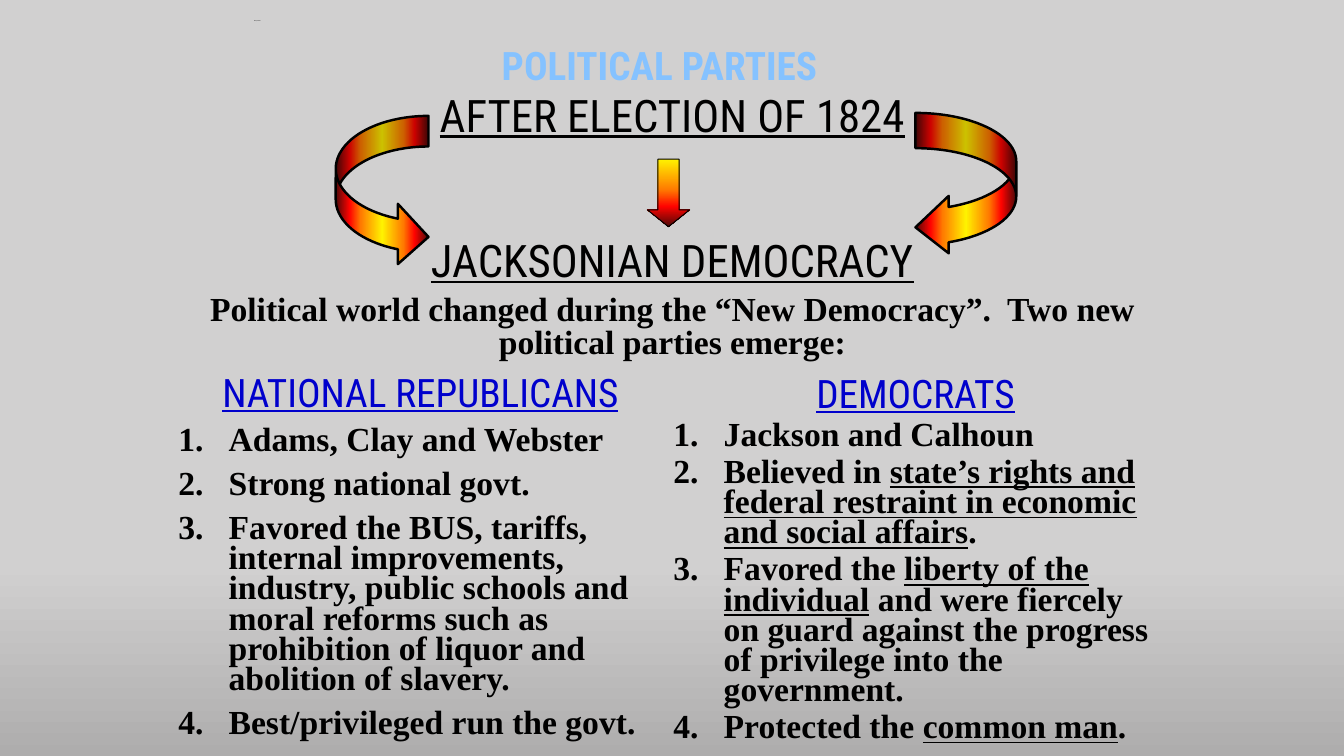
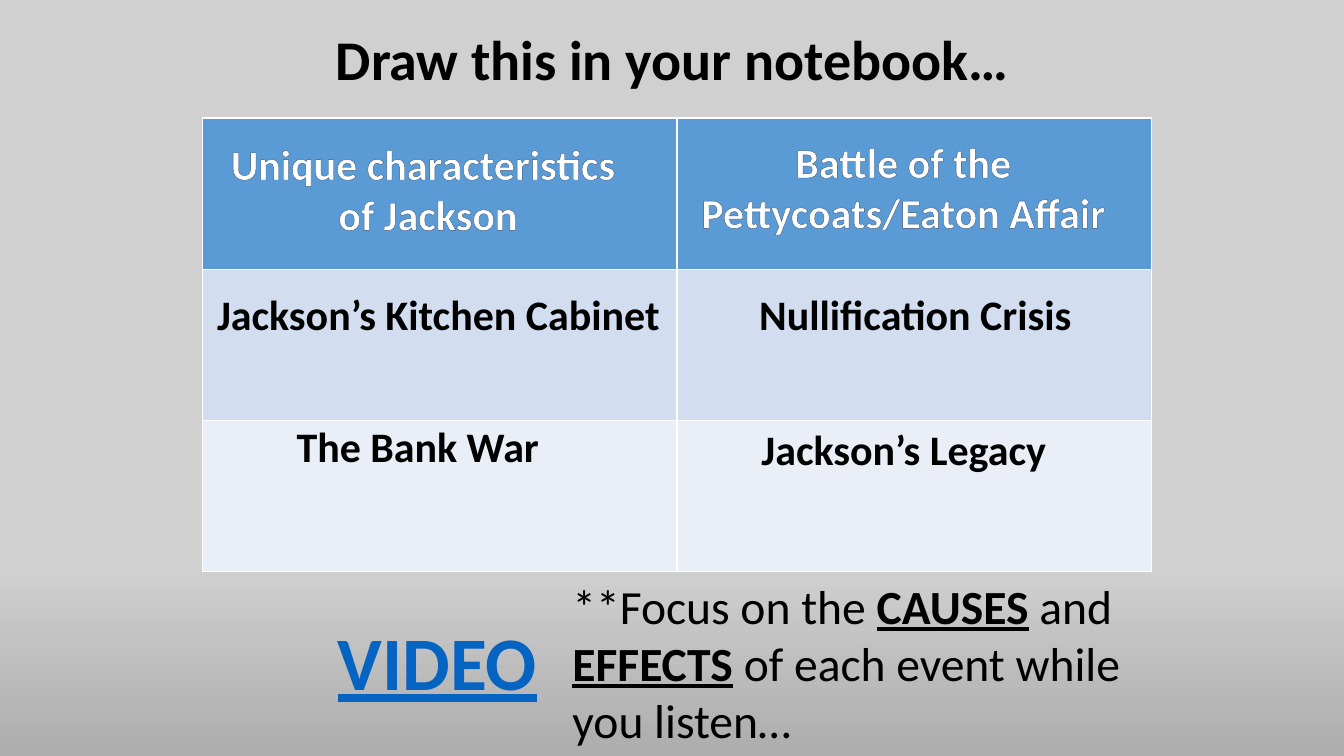
"""Build two slides on Jacksonian democracy and its political parties."""
from lxml import etree
from pptx import Presentation
from pptx.dml.color import RGBColor
from pptx.enum.shapes import MSO_SHAPE
from pptx.enum.text import MSO_ANCHOR, MSO_AUTO_SIZE, PP_ALIGN
from pptx.oxml.ns import qn
from pptx.util import Inches, Pt

LEFT, MID = PP_ALIGN.LEFT, PP_ALIGN.CENTER
TOP, NONE = MSO_ANCHOR.TOP, MSO_AUTO_SIZE.NONE
RIGHT_ARC = MSO_SHAPE.CURVED_RIGHT_ARROW
LEFT_ARC = MSO_SHAPE.CURVED_LEFT_ARROW
DOWN = MSO_SHAPE.DOWN_ARROW
HEAD, BODY, PLAIN = "Roboto Condensed", "Times New Roman", "Calibri"
HUES = {
    "black": "000000", "white": "FFFFFF", "navy": "0000CC", "sky": "85C2FF",
    "link": "0563C1", "edge": "3A5274", "blue": "5B9BD5", "pale": "D2DEEF",
    "mist": "EAEFF7", "dark": "4D0808", "red": "FF0300", "orange": "FF7A00",
    "yellow": "FFF200", "gray1": "D1D0D0", "gray2": "CFCECE", "gray3": "AEADAD",
}
FLAME = [(0, "dark"), (15, "red"), (27, "orange"), (50, "yellow"),
         (73, "orange"), (85, "red"), (100, "dark")]
FALL = [(0, "yellow"), (45, "orange"), (70, "red"), (100, "dark")]
GRAYS = [(0, "gray1"), (76, "gray2"), (100, "gray3")]


def blend(fill, root, stops, angle):
    """Fill with a gradient of several stops."""
    fill.gradient()
    group = next(root.iter(qn("a:gsLst")))
    group.clear()
    for pos, hue in stops:
        stop = etree.SubElement(group, qn("a:gs"), pos=str(pos * 1000))
        etree.SubElement(stop, qn("a:srgbClr"), val=HUES[hue])
    next(root.iter(qn("a:lin"))).set("ang", str(angle * 60000))


def write(frame, text, size, face, hue="black", bold=None, line=None,
          align=MID, above=0, space=1.0, number=False, edge=False):
    """Add a paragraph; underscores set off underlined bold words."""
    para = frame.paragraphs[0]
    if para.runs:
        para = frame.add_paragraph()
    for i, part in enumerate(text.split("_")):
        run = para.add_run()
        run.text = part
        if i % 2:
            run.font.underline = run.font.bold = True
    para.alignment, para.line_spacing = align, space
    para.space_before = Pt(above)
    font = para.font
    font.size, font.name, font.bold, font.underline = Pt(size), face, bold, line
    font.color.rgb = RGBColor.from_string(HUES[hue])
    props = para._p.get_or_add_pPr()
    base = props.find(qn("a:defRPr"))
    if number:
        props.set("marL", str(Inches(0.5)))
        props.set("indent", str(-Inches(0.5)))
        mark = etree.Element(qn("a:buAutoNum"), type="arabicPeriod")
        base.addprevious(mark)
    if edge:
        ln = etree.Element(qn("a:ln"), w=str(Pt(1)))
        solid = etree.SubElement(ln, qn("a:solidFill"))
        etree.SubElement(solid, qn("a:srgbClr"), val=HUES["edge"])
        base.insert(0, ln)


prs = Presentation()
prs.slide_width, prs.slide_height = Inches(13.33), Inches(7.5)
master = prs.slide_master
blend(master.background.fill, master._element, GRAYS, 90)
layout = prs.slide_layouts[5]

slide = prs.slides.add_slide(layout)
title = slide.shapes.title
title.left, title.top = Inches(2.42), Inches(0.08)
title.width, title.height = Inches(8.5), Inches(0.25)
title.text_frame.auto_size = NONE
write(title.text_frame, "New parties", 1, PLAIN, align=LEFT, space=0.9)

box = slide.shapes.add_textbox(
    Inches(4.04), Inches(0.36), Inches(5), Inches(0.55))
write(box.text_frame, "POLITICAL PARTIES", 28, HEAD, "sky", bold=True)
box.text_frame.word_wrap = True

box = slide.shapes.add_textbox(
    Inches(1.67), Inches(0.92), Inches(10), Inches(3.21))
frame = box.text_frame
frame.word_wrap = True
for text, above in [("AFTER ELECTION OF 1824", 9.6),
                    ("JACKSONIAN DEMOCRACY", 73)]:
    write(frame, text, 32, HEAD, line=True, above=above, space=0.8)
write(frame, "Political world changed during the “New Democracy”.  "
      "Two new political parties emerge:", 24, BODY, bold=True,
      above=7.2, space=0.8)

arrows = [
    (RIGHT_ARC, 3.33, 1.15, 0.92, 1.5, (0.33, 0.65, 0.33), FLAME, 0, 1.75),
    (LEFT_ARC, 9.08, 1.12, 1, 1.42, (0.35, 0.57, 0.33), FLAME, 0, 1.75),
    (DOWN, 6.42, 1.58, 0.42, 0.67, (0.5, 0.4), FALL, 90, 0.75),
]
for kind, x, y, w, h, bends, stops, angle, weight in arrows:
    arrow = slide.shapes.add_shape(
        kind, Inches(x), Inches(y), Inches(w), Inches(h))
    arrow.shadow.inherit = False
    for i, bend in enumerate(bends):
        arrow.adjustments[i] = bend
    blend(arrow.fill, arrow._element, stops, angle)
    arrow.line.color.rgb = RGBColor.from_string(HUES["black"])
    arrow.line.width = Pt(weight)

parties = [
    (1.67, 3.71, 3.79, "NATIONAL REPUBLICANS", 0.75, 9.6, [
        "Adams, Clay and Webster",
        "Strong national govt.",
        "Favored the BUS, tariffs, internal improvements, industry, public "
        "schools and moral reforms such as prohibition of liquor and "
        "abolition of slavery.",
        "Best/privileged run the govt."]),
    (6.58, 3.7, 3.83, "DEMOCRATS", 0.8, 4.8, [
        "Jackson and Calhoun",
        "Believed in _state’s rights and federal restraint in economic and "
        "social affairs_.",
        "Favored the _liberty of the individual_ and were fiercely on guard "
        "against the progress of privilege into the government.",
        "Protected the _common man_."]),
]
for x, y, h, name, space, above, points in parties:
    box = slide.shapes.add_textbox(Inches(x), Inches(y), Inches(5), Inches(h))
    frame = box.text_frame
    frame.word_wrap = True
    write(frame, name, 28, HEAD, "navy", line=True, above=11.2, space=space)
    for point in points:
        write(frame, point, 24, BODY, bold=True, align=LEFT, above=above,
              space=0.75, number=True)

slide = prs.slides.add_slide(layout)
title = slide.shapes.title
title.left, title.top = Inches(3.19), Inches(0.19)
title.width, title.height = Inches(6.95), Inches(0.77)
frame = title.text_frame
frame.auto_size, frame.vertical_anchor = NONE, TOP
frame.margin_left = frame.margin_right = 0
write(frame, "Draw this in your notebook…", 40, PLAIN, bold=True, edge=True)

table = slide.shapes.add_table(
    3, 2, Inches(2.01), Inches(1.17), Inches(9.41), Inches(4.5)).table
for row, hue in zip(table.rows, ["blue", "pale", "mist"]):
    for cell in row.cells:
        cell.fill.solid()
        cell.fill.fore_color.rgb = RGBColor.from_string(HUES[hue])

labels = [
    (2.17, 1.32, 4.15, 1.11, ["Unique characteristics ", "of Jackson"],
     30, "white"),
    (6.71, 1.3, 4.5, 1.11, ["Battle of the Pettycoats/Eaton Affair"],
     30, "white"),
    (2.03, 2.81, 4.64, 0.61, ["Jackson’s Kitchen Cabinet"], 30, "black"),
    (7.41, 2.81, 3.34, 0.61, ["Nullification Crisis"], 30, "black"),
    (2.83, 4.12, 2.63, 0.61, ["The Bank War"], 30, "black"),
    (7.44, 4.15, 3.05, 0.61, ["Jackson’s Legacy"], 30, "black"),
    (3.24, 6.05, 2.2, 1.01, ["VIDEO"], 54, "link"),
]
for x, y, w, h, lines, size, hue in labels:
    box = slide.shapes.add_textbox(Inches(x), Inches(y), Inches(w), Inches(h))
    frame = box.text_frame
    frame.word_wrap = True
    frame.margin_left = frame.margin_right = 0
    for text in lines:
        write(frame, text, size, PLAIN, hue, bold=True, line=hue == "link",
              edge=True)

box = slide.shapes.add_textbox(
    Inches(5.58), Inches(5.67), Inches(5.83), Inches(1.82))
box.text_frame.word_wrap = True
write(box.text_frame, "**Focus on the _CAUSES_ and _EFFECTS_ of each event "
      "while you listen…", 34, PLAIN, align=LEFT)

prs.save("out.pptx")
